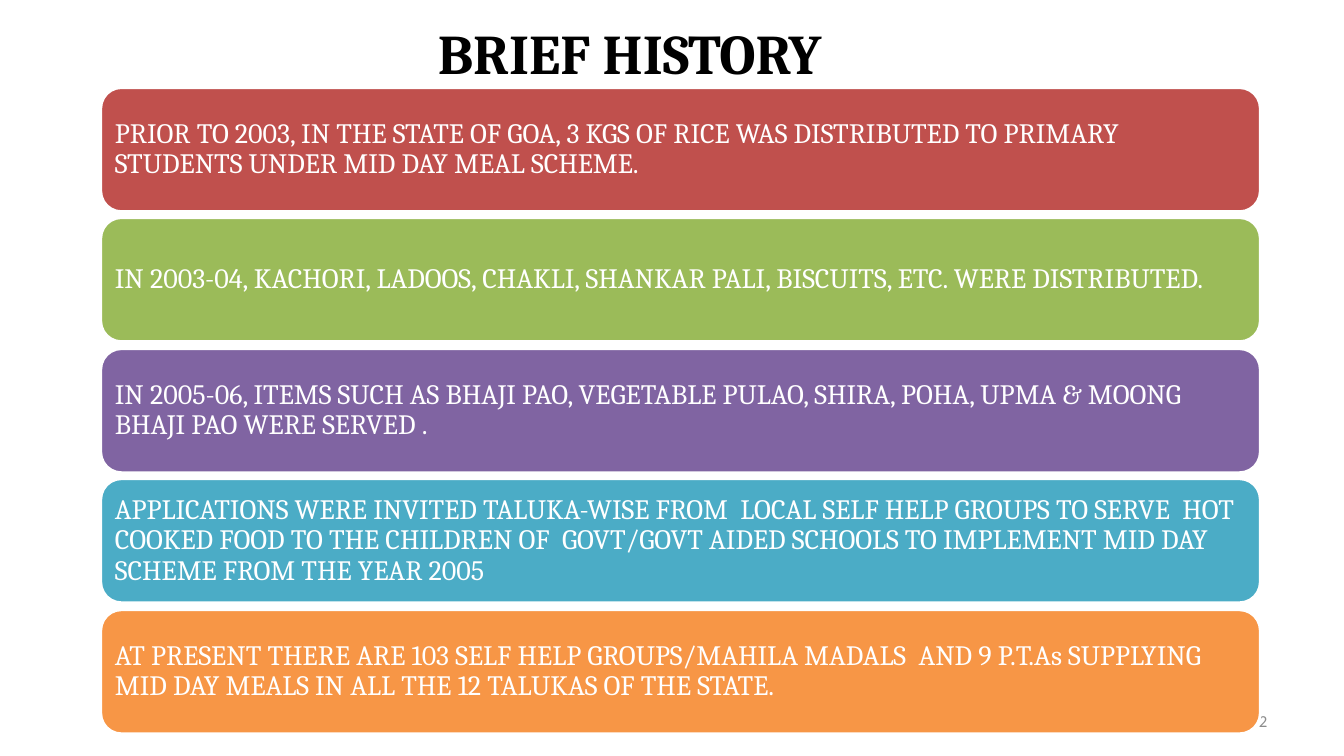
from dataclasses import dataclass

from pptx import Presentation
from pptx.dml.color import RGBColor
from pptx.enum.shapes import MSO_SHAPE as Shape
from pptx.enum.text import MSO_ANCHOR as Anchor, MSO_AUTO_SIZE as AutoSize, PP_ALIGN as Align
from pptx.util import Emu, Pt

EMU_PER_PX = 9144  # 100 px to the inch


@dataclass(frozen=True)
class Theme:
    heading_font: str = "Cambria"
    number_font: str = "Calibri"
    title_size: int = 40
    panel_size: int = 20
    number_size: int = 12
    black: str = "000000"
    white: str = "FFFFFF"
    grey: str = "8C8C8C"
    panels: tuple = ("C0504D", "9BBB59", "8064A2", "4BACC6", "F79646")


HISTORY = (
    "PRIOR TO 2003, IN THE STATE OF GOA, 3 KGS OF RICE WAS DISTRIBUTED TO PRIMARY "
    "STUDENTS UNDER MID DAY MEAL SCHEME.",
    "IN 2003-04, KACHORI, LADOOS, CHAKLI, SHANKAR PALI, BISCUITS, ETC. WERE DISTRIBUTED.",
    "IN 2005-06, ITEMS SUCH AS BHAJI PAO, VEGETABLE PULAO, SHIRA, POHA, UPMA & MOONG "
    "BHAJI PAO WERE SERVED .",
    "APPLICATIONS WERE INVITED TALUKA-WISE FROM  LOCAL SELF HELP GROUPS TO SERVE  HOT "
    "COOKED FOOD TO THE CHILDREN OF  GOVT/GOVT AIDED SCHOOLS TO IMPLEMENT MID DAY "
    "SCHEME FROM THE YEAR 2005",
    "AT PRESENT THERE ARE 103 SELF HELP GROUPS/MAHILA MADALS  AND 9 P.T.As SUPPLYING "
    "MID DAY MEALS IN ALL THE 12 TALUKAS OF THE STATE.",
)


def px(*lengths):
    return [Emu(length * EMU_PER_PX) for length in lengths]


def write(shape, text, *, font, size, color, bold=False, align=Align.LEFT, spacing=None):
    frame = shape.text_frame
    frame.word_wrap = True
    frame.auto_size = AutoSize.NONE
    frame.vertical_anchor = Anchor.MIDDLE
    frame.text = text
    paragraph = frame.paragraphs[0]
    paragraph.alignment = align
    if spacing:
        paragraph.line_spacing = spacing
    run_font = paragraph.runs[0].font
    run_font.name, run_font.size, run_font.bold = font, Pt(size), bold
    run_font.color.rgb = RGBColor.from_string(color)


class SlideBuilder:
    def __init__(self, slide, theme):
        self.slide = slide
        self.theme = theme

    def title(self, text, *box):
        shape = self.slide.shapes.title
        shape.left, shape.top, shape.width, shape.height = px(*box)
        write(shape, text, font=self.theme.heading_font, size=self.theme.title_size,
              color=self.theme.black, bold=True, align=Align.CENTER)

    def page_number(self, text, *box):
        shape = self.slide.shapes.add_textbox(*px(*box))
        write(shape, text, font=self.theme.number_font, size=self.theme.number_size,
              color=self.theme.grey, align=Align.RIGHT)

    def panel(self, group, text, color, *box):
        shape = group.shapes.add_shape(Shape.ROUNDED_RECTANGLE, *px(*box))
        shape.shadow.inherit = False
        shape.fill.solid()
        shape.fill.fore_color.rgb = RGBColor.from_string(color)
        shape.line.color.rgb = RGBColor.from_string(self.theme.white)
        shape.line.width = Pt(2)
        frame = shape.text_frame
        (frame.margin_left, frame.margin_top,
         frame.margin_right, frame.margin_bottom) = px(8, 8, 8, 8)
        write(shape, text, font=self.theme.heading_font, size=self.theme.panel_size,
              color=self.theme.white, spacing=0.9)

    def panel_list(self, texts, left, top, width, height, span):
        """Stack panels so that the last one starts span px below the first."""
        group = self.slide.shapes.add_group_shape()
        steps = len(texts) - 1
        for index, (text, color) in enumerate(zip(texts, self.theme.panels)):
            self.panel(group, text, color, left, top + index * span // steps, width, height)


def main():
    presentation = Presentation()
    presentation.slide_width, presentation.slide_height = px(1333, 750)
    title_only = presentation.slide_layouts[5]
    builder = SlideBuilder(presentation.slides.add_slide(title_only), Theme())

    # Heading and page number
    builder.page_number("2", 956, 695, 311, 40)
    builder.title("BRIEF HISTORY", 108, 19, 1033, 65)

    # Coloured history panels
    builder.panel_list(HISTORY, left=100, top=87, width=1150, height=123, span=518)

    presentation.save("out.pptx")


if __name__ == "__main__":
    main()
